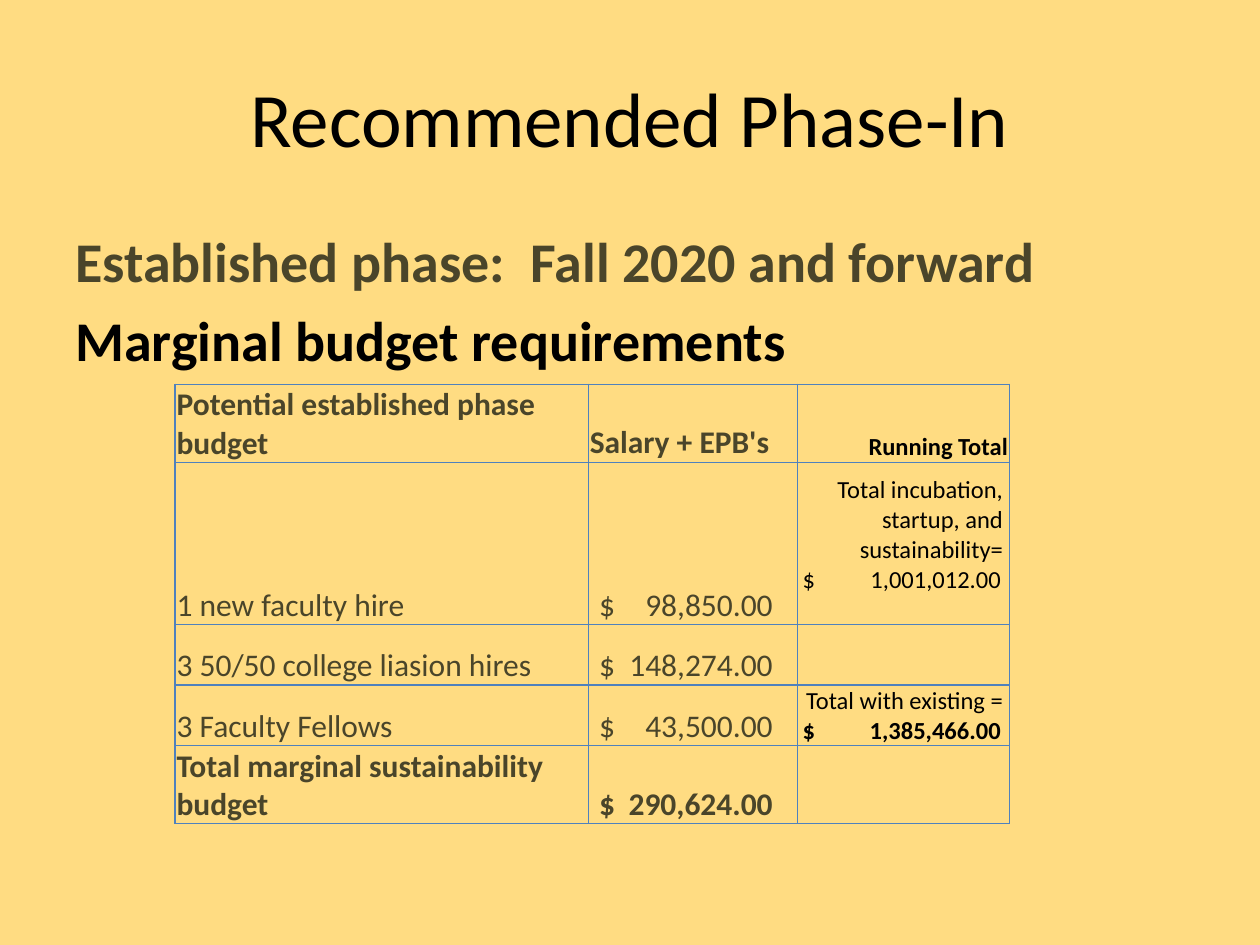
from dataclasses import dataclass

from lxml import etree
from pptx import Presentation
from pptx import util as u
from pptx.dml.color import RGBColor
from pptx.enum import text
from pptx.oxml import ns

FONT = "Calibri"
BLACK, OLIVE = "000000", "4A452A"
BORDER, BACKGROUND = "4F81BD", "FFDC82"
COLUMN_WIDTHS = (8.33, 4.22, 4.27)
ROW_HEIGHTS = (1.57, 3.27, 1.22, 1.22, 1.57)
TAB_STOPS = (None, 3.5, 4.0)  # right edge of the amounts in each column
LEFT_INSETS = (0.03, 0.22, 0.1)


@dataclass
class Line:
    """One paragraph; a tab separates a dollar sign from its amount."""
    words: str
    size: float = 18
    color: str = OLIVE
    bold: bool = False
    align: text.PP_ALIGN = text.PP_ALIGN.LEFT


@dataclass
class Entry:
    """The content of one table cell, with its insets in cm."""
    lines: tuple[Line, ...] = ()
    left: float | None = None
    right: float = 0.03
    bottom: float = 0


def color(value: str) -> RGBColor:
    return RGBColor.from_string(value)


def add_tab_stop(paragraph, position: float) -> None:
    tabs = etree.SubElement(paragraph._p.get_or_add_pPr(), ns.qn("a:tabLst"))
    etree.SubElement(tabs, ns.qn("a:tab"), pos=str(u.Cm(position)), algn="r")


def write_lines(frame, lines: tuple[Line, ...], space_before: float = 0,
                tab_stop: float | None = None) -> None:
    frame.word_wrap = True
    for index, line in enumerate(lines):
        paragraph = frame.paragraphs[0] if index == 0 else frame.add_paragraph()
        paragraph.alignment = line.align
        paragraph.space_before = u.Pt(space_before)
        if "\t" in line.words:
            add_tab_stop(paragraph, tab_stop)
        run = paragraph.add_run()
        run.text = line.words
        run.font.name = FONT
        run.font.size = u.Pt(line.size)
        run.font.bold = line.bold
        run.font.color.rgb = color(line.color)


def add_borders(cell) -> None:
    properties = cell._tc.get_or_add_tcPr()
    for index, side in enumerate(("lnL", "lnR", "lnT", "lnB")):
        border = etree.Element(ns.qn(f"a:{side}"), w=str(u.Pt(1)))
        fill = etree.SubElement(border, ns.qn("a:solidFill"))
        etree.SubElement(fill, ns.qn("a:srgbClr"), val=BORDER)
        properties.insert(index, border)


def fill_cell(cell, entry: Entry, column: int) -> None:
    cell.fill.background()
    add_borders(cell)
    cell.vertical_anchor = text.MSO_ANCHOR.BOTTOM
    left = LEFT_INSETS[column] if entry.left is None else entry.left
    cell.margin_left, cell.margin_right = u.Cm(left), u.Cm(entry.right)
    cell.margin_top, cell.margin_bottom = u.Cm(0.03), u.Cm(entry.bottom)
    write_lines(cell.text_frame, entry.lines, tab_stop=TAB_STOPS[column])


def label(words: str, bold: bool = False) -> Entry:
    return Entry((Line(words, bold=bold),), left=0.03)


def amount(value: str, bold: bool = False) -> Entry:
    return Entry((Line(f"$\t{value}", bold=bold),))


def running_total(words: str, value: str, bold: bool = False,
                  bottom: float = 0) -> Entry:
    return Entry((Line(words, 14, BLACK, align=text.PP_ALIGN.RIGHT),
                  Line(f"$\t{value}", 14, BLACK, bold)),
                 right=0.13, bottom=bottom)


BUDGET = (
    (label("Potential established phase budget", True),
     label("Salary + EPB's", True),
     Entry((Line("Running Total", 14, BLACK, True, text.PP_ALIGN.RIGHT),))),
    (label("1 new faculty hire"), amount("98,850.00"),
     running_total("Total incubation, startup, and sustainability=",
                   "1,001,012.00", bottom=0.6)),
    (label("3 50/50 college liasion hires"), amount("148,274.00"), Entry()),
    (label("3 Faculty Fellows"), amount("43,500.00"),
     running_total("Total with existing =", "1,385,466.00", bold=True)),
    (label("Total marginal sustainability budget", True),
     amount("290,624.00", True), Entry()),
)


def add_budget_table(slide) -> None:
    table = slide.shapes.add_table(
        len(ROW_HEIGHTS), len(COLUMN_WIDTHS), u.Cm(3.53), u.Cm(7.75),
        u.Cm(sum(COLUMN_WIDTHS)), u.Cm(sum(ROW_HEIGHTS))).table
    table.first_row = table.horz_banding = False
    for column, width in zip(table.columns, COLUMN_WIDTHS):
        column.width = u.Cm(width)
    for row, height, entries in zip(table.rows, ROW_HEIGHTS, BUDGET):
        row.height = u.Cm(height)
        for column, (cell, entry) in enumerate(zip(row.cells, entries)):
            fill_cell(cell, entry, column)


def main() -> None:
    presentation = Presentation()
    presentation.slide_width, presentation.slide_height = u.Cm(25.4), u.Cm(19.05)
    slide = presentation.slides.add_slide(presentation.slide_layouts[5])
    slide.background.fill.solid()
    slide.background.fill.fore_color.rgb = color(BACKGROUND)

    # Title
    title = slide.shapes.title
    title.left, title.top = u.Cm(1.27), u.Cm(0.76)
    title.width, title.height = u.Cm(22.86), u.Cm(3.18)
    title.text_frame.vertical_anchor = text.MSO_ANCHOR.MIDDLE
    write_lines(title.text_frame, (
        Line("Recommended Phase-In", 44, BLACK, align=text.PP_ALIGN.CENTER),))

    # Phase headings
    headings = slide.shapes.add_textbox(u.Cm(1.27), u.Cm(4.45),
                                        u.Cm(22.86), u.Cm(12.57))
    write_lines(headings.text_frame, (
        Line("Established phase:  Fall 2020 and forward", 32, OLIVE, True),
        Line("Marginal budget requirements", 32, BLACK, True)), space_before=6.4)

    # Budget
    add_budget_table(slide)
    presentation.save("out.pptx")


if __name__ == "__main__":
    main()
